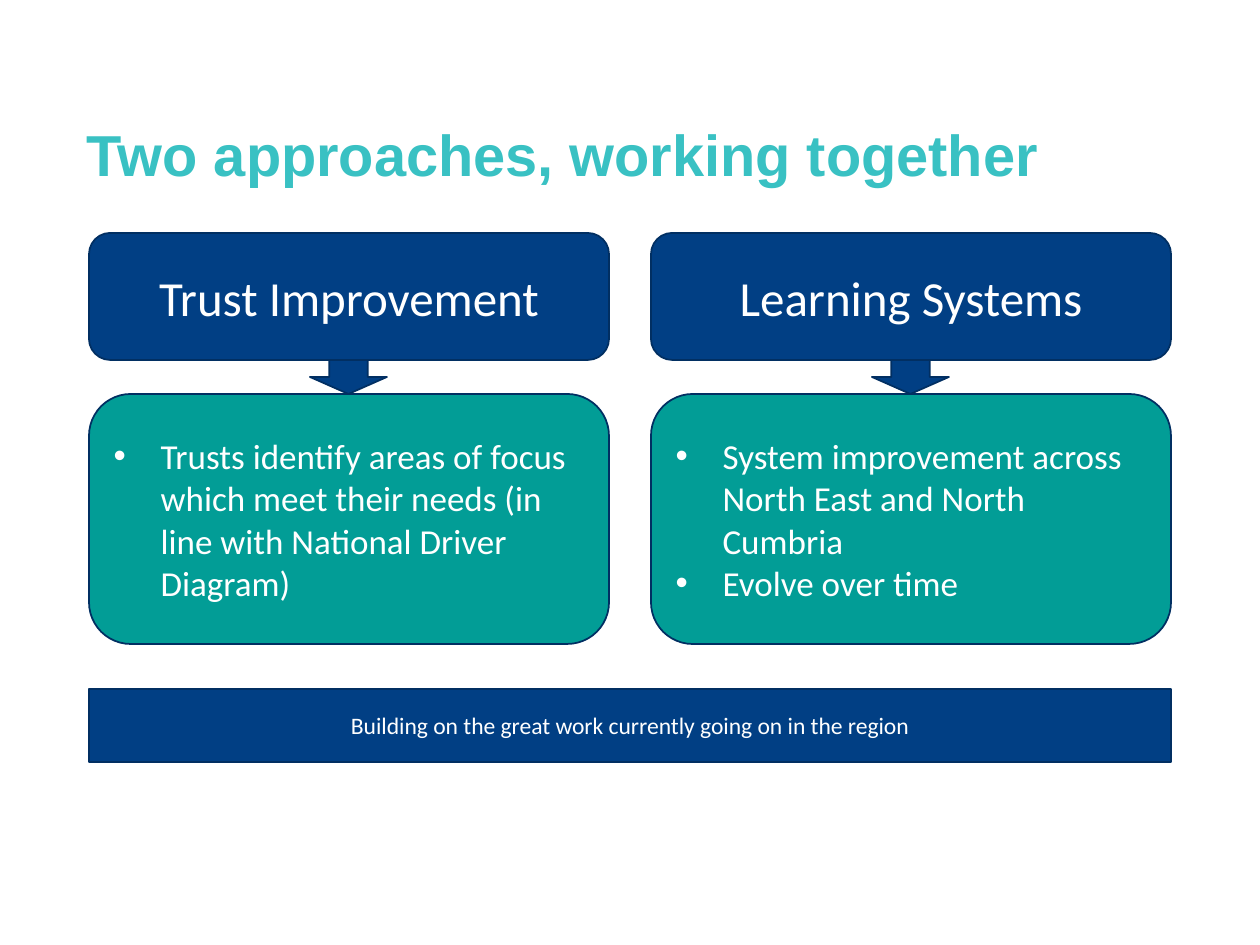
import pptx
import pptx.util
import pptx.dml.color
import pptx.enum.shapes
import pptx.enum.text
import lxml.etree

RGBColor = pptx.dml.color.RGBColor
SHAPE = pptx.enum.shapes.MSO_SHAPE
ANCHOR = pptx.enum.text.MSO_ANCHOR
ALIGN = pptx.enum.text.PP_ALIGN

NAVY = RGBColor(0x01, 0x3F, 0x84)
OUTLINE = RGBColor(0x01, 0x2F, 0x62)
TEAL = RGBColor(0x02, 0x9D, 0x96)
TURQUOISE = RGBColor(0x39, 0xC1, 0xC3)
WHITE = RGBColor(0xFF, 0xFF, 0xFF)

EMU_PER_INCH = 914400
PX_PER_INCH = 126


def px(length):
    return round(length * EMU_PER_INCH / PX_PER_INCH)


def add_bullet(para, indent):
    properties = para._p.get_or_add_pPr()
    properties.set("marL", str(px(indent)))
    properties.set("indent", str(-px(indent)))
    namespace = pptx.oxml.ns.nsdecls("a")
    for xml in (f'<a:buFont {namespace} typeface="Arial"/>', f'<a:buChar {namespace} char="•"/>'):
        properties.append(lxml.etree.fromstring(xml, pptx.oxml.oxml_parser))


def write_text(frame, lines, size, color=WHITE, font="Calibri", bold=False,
               align=ALIGN.CENTER, anchor=ANCHOR.MIDDLE, bullet_indent=0, spacing=None):
    frame.word_wrap = True
    frame.vertical_anchor = anchor
    for index, line in enumerate(lines):
        para = frame.paragraphs[0] if index == 0 else frame.add_paragraph()
        para.alignment = align
        if spacing:
            para.line_spacing = spacing
        if bullet_indent:
            add_bullet(para, bullet_indent)
        span = para.add_run()
        span.text = line
        span.font.size = pptx.util.Pt(size)
        span.font.name = font
        span.font.bold = bold
        span.font.color.rgb = color


class SlideBuilder:
    def __init__(self, slide):
        self.slide = slide

    def title(self, text, left, top, width, height):
        box = self.slide.shapes.add_textbox(px(left), px(top), px(width), px(height))
        frame = box.text_frame
        frame.margin_left = frame.margin_right = frame.margin_top = frame.margin_bottom = 0
        write_text(frame, [text], 33, color=TURQUOISE, font="Arial", bold=True,
                   align=ALIGN.LEFT, anchor=ANCHOR.BOTTOM, spacing=0.9)

    def box(self, kind, left, top, width, height, fill=NAVY):
        box = self.slide.shapes.add_shape(kind, px(left), px(top), px(width), px(height))
        box.shadow.inherit = False
        box.fill.solid()
        box.fill.fore_color.rgb = fill
        box.line.color.rgb = OUTLINE
        box.line.width = pptx.util.Pt(1)
        return box

    def approach(self, left, width, heading, points):
        heading_box = self.box(SHAPE.ROUNDED_RECTANGLE, left, 233, width, 127)
        write_text(heading_box.text_frame, [heading], 28)
        points_box = self.box(SHAPE.ROUNDED_RECTANGLE, left, 394, width, 250, fill=TEAL)
        write_text(points_box.text_frame, points, 20, align=ALIGN.LEFT, bullet_indent=47)
        arrow_width = 77
        self.box(SHAPE.DOWN_ARROW, left + (width - arrow_width) // 2, 360, arrow_width, 34)

    def banner(self, text, left, top, width, height):
        banner = self.box(SHAPE.RECTANGLE, left, top, width, height)
        write_text(banner.text_frame, [text], 13.5)


def main():
    deck = pptx.Presentation()
    deck.slide_width = px(1260)
    deck.slide_height = px(945)
    page = SlideBuilder(deck.slides.add_slide(deck.slide_layouts[6]))

    page.title("Two approaches, working together", 87, 123, 1086, 66)
    approaches = [
        ("Trust Improvement",
         ["Trusts identify areas of focus which meet their needs "
          "(in line with National Driver Diagram)"]),
        ("Learning Systems",
         ["System improvement across North East and North Cumbria", "Evolve over time"]),
    ]
    left, width, gap = 89, 520, 42
    for column, (heading, points) in enumerate(approaches):
        page.approach(left + column * (width + gap), width, heading, points)
    page.banner("Building on the great work currently going on in the region",
                left, 689, 2 * width + gap, 73)

    deck.save("out.pptx")


if __name__ == "__main__":
    main()
